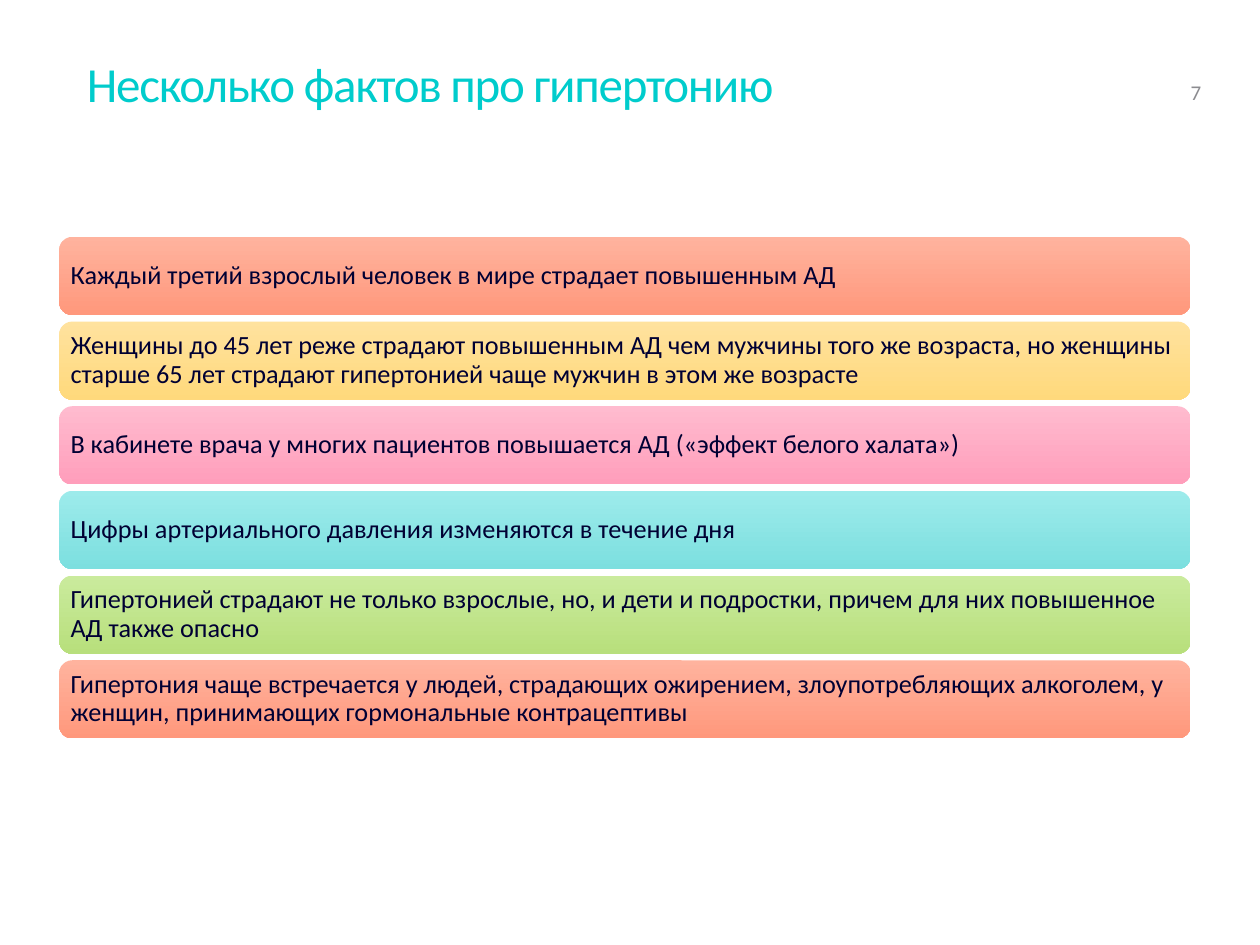
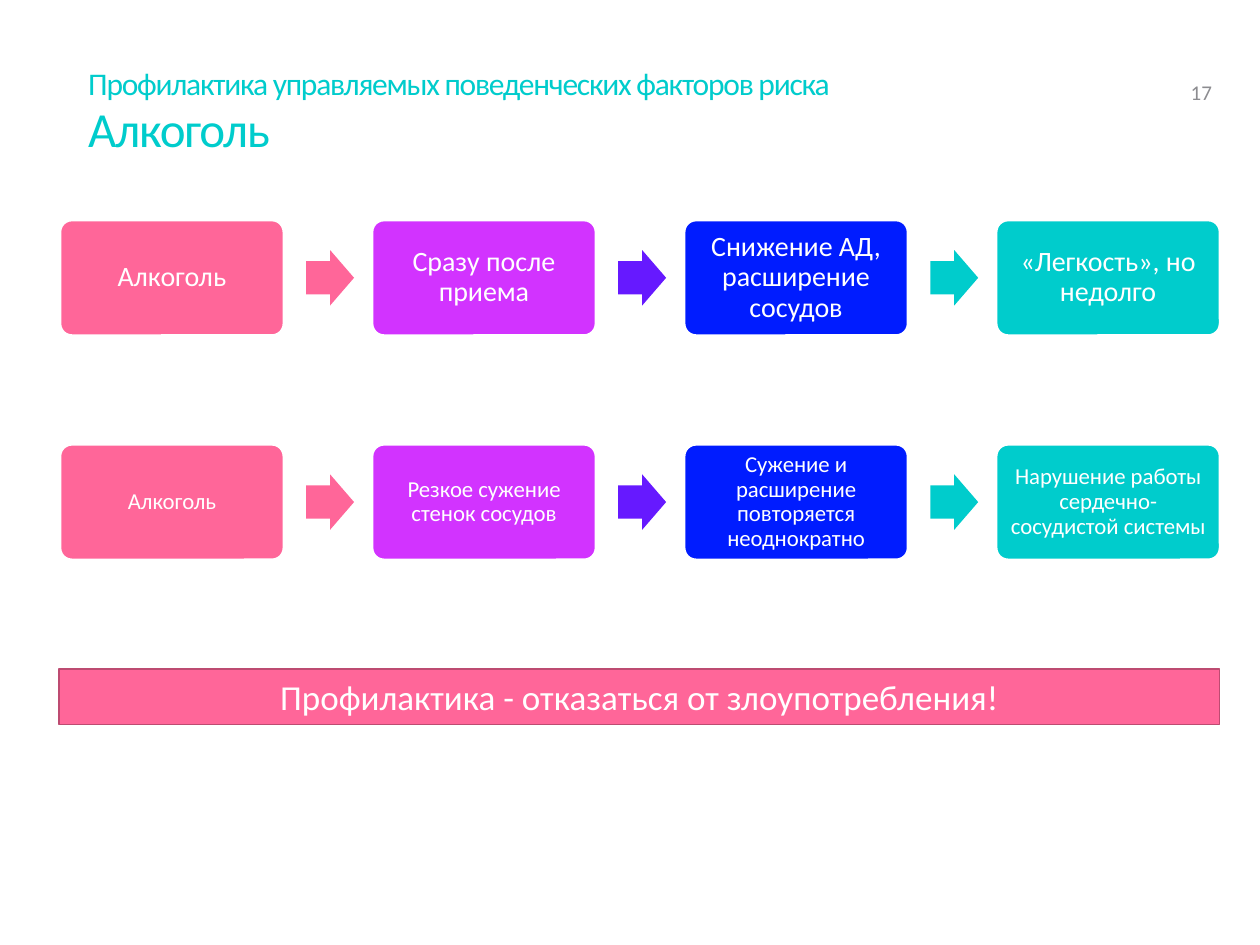
"""Build two slides on hypertension facts and alcohol as a risk factor."""
from dataclasses import dataclass
from typing import NamedTuple, Optional

from pptx import Presentation
from pptx import util as u
from pptx.dml.color import RGBColor
from pptx.enum import shapes, text


@dataclass(frozen=True)
class Theme:
    font: str = "Calibri"
    ink: str = "000033"
    white: str = "FFFFFF"
    gray: str = "8C8C90"
    teal: str = "00CCCC"
    pink: str = "FF6699"
    pink_edge: str = "BD4B71"
    purple: str = "D233FF"
    violet: str = "6619FF"
    blue: str = "001CFF"
    coral_fade: tuple = ("FFB39E", "FF987C")
    amber_fade: tuple = ("FFE29E", "FFD97C")
    rose_fade: tuple = ("FFBBCF", "FF9EBB")
    aqua_fade: tuple = ("9DEBEB", "7CDFDF")
    lime_fade: tuple = ("CAEB9D", "B8DF7C")
    title_size: int = 28
    kicker_size: int = 18
    number_size: int = 12
    fact_size: int = 15
    banner_size: int = 20
    title_leading: int = 32
    body_leading: float = 0.9


THEME = Theme()


class Box(NamedTuple):
    left: float
    top: float
    width: float
    height: float

    def lengths(self) -> list:
        return [u.Inches(side) for side in self]


class Words(NamedTuple):
    content: str
    size: int
    color: str


class Fact(NamedTuple):
    content: str
    fade: tuple


class Step(NamedTuple):
    fill: str
    arrow: Optional[str]


class Flow(NamedTuple):
    top: float
    size: int
    inset: float
    labels: tuple


FACTS = (
    Fact("Каждый третий взрослый человек в мире страдает повышенным АД", THEME.coral_fade),
    Fact("Женщины до 45 лет реже страдают повышенным АД чем мужчины того же возраста, "
         "но женщины старше 65 лет страдают гипертонией чаще мужчин в этом же возрасте",
         THEME.amber_fade),
    Fact("В кабинете врача у многих пациентов повышается АД («эффект белого халата»)",
         THEME.rose_fade),
    Fact("Цифры артериального давления изменяются в течение дня", THEME.aqua_fade),
    Fact("Гипертонией страдают не только взрослые, но, и дети и подростки, "
         "причем для них повышенное АД также опасно", THEME.lime_fade),
    Fact("Гипертония чаще встречается у людей, страдающих ожирением, злоупотребляющих "
         "алкоголем, у женщин, принимающих гормональные контрацептивы", THEME.coral_fade),
)
STEPS = (
    Step(THEME.pink, THEME.pink),
    Step(THEME.purple, THEME.violet),
    Step(THEME.blue, THEME.teal),
    Step(THEME.teal, None),
)
FLOWS = (
    Flow(1.75, 16, 0.07, ("Алкоголь", "Сразу после приема",
                          "Снижение АД, расширение сосудов", "«Легкость», но недолго")),
    Flow(3.53, 13, 0.05, ("Алкоголь", "Резкое сужение стенок сосудов",
                          "Сужение и расширение повторяется неоднократно",
                          "Нарушение работы сердечно-сосудистой системы")),
)


def rgb(color: str) -> RGBColor:
    return RGBColor.from_string(color)


def add_words(paragraph, words: Words):
    run = paragraph.add_run()
    run.text = words.content
    run.font.name = THEME.font
    run.font.size = u.Pt(words.size)
    run.font.color.rgb = rgb(words.color)
    return run


def set_frame(frame, anchor, across: float, down: float) -> None:
    frame.word_wrap = True
    frame.auto_size = text.MSO_AUTO_SIZE.NONE
    frame.vertical_anchor = anchor
    frame.margin_left = frame.margin_right = u.Inches(across)
    frame.margin_top = frame.margin_bottom = u.Inches(down)


def add_panel(parent, kind, box: Box, fill: str | tuple, edge: str | None = None):
    panel = parent.add_shape(kind, *box.lengths())
    panel.shadow.inherit = False
    if isinstance(fill, tuple):
        panel.fill.gradient()
        panel.fill.gradient_angle = 270
        for stop, color in zip(panel.fill.gradient_stops, fill):
            stop.color.rgb = rgb(color)
    else:
        panel.fill.solid()
        panel.fill.fore_color.rgb = rgb(fill)
    if edge:
        panel.line.color.rgb = rgb(edge)
        panel.line.width = u.Pt(1)
    else:
        panel.line.fill.background()
    return panel


def label_panel(panel, words: Words, align, inset: float, leading: float) -> None:
    set_frame(panel.text_frame, text.MSO_ANCHOR.MIDDLE, inset, inset)
    paragraph = panel.text_frame.paragraphs[0]
    paragraph.alignment = align
    paragraph.line_spacing = leading
    add_words(paragraph, words)


def add_titled_slide(deck, box: Box, lines: tuple, number: str):
    slide = deck.slides.add_slide(deck.slide_layouts[5])
    title = slide.shapes.title
    title.left, title.top, title.width, title.height = box.lengths()
    set_frame(title.text_frame, text.MSO_ANCHOR.TOP, 0, 0.05)
    heading = title.text_frame.paragraphs[0]
    heading.alignment = text.PP_ALIGN.LEFT
    heading.line_spacing = u.Pt(THEME.title_leading)
    for index, words in enumerate(lines):
        if index:
            heading.add_line_break()
        add_words(heading, words).font._element.set("spc", "-70")

    page = slide.shapes.add_textbox(*Box(9.45, 0.4, 0.38, 0.47).lengths())
    set_frame(page.text_frame, text.MSO_ANCHOR.BOTTOM, 0, 0.04)
    add_words(page.text_frame.paragraphs[0], Words(number, THEME.number_size, THEME.gray))
    return slide


def add_facts(slide) -> None:
    top, bottom, height = 1.88, 5.86, 0.62
    pitch = (bottom - height - top) / (len(FACTS) - 1)
    group = slide.shapes.add_group_shape().shapes
    for row, fact in enumerate(FACTS):
        bar = add_panel(group, shapes.MSO_SHAPE.ROUNDED_RECTANGLE,
                        Box(0.47, top + row * pitch, 8.98, height), fact.fade)
        label_panel(bar, Words(fact.content, THEME.fact_size, THEME.ink),
                    text.PP_ALIGN.LEFT, 0.06, THEME.body_leading)


def add_flow(slide, flow: Flow) -> None:
    left, right, width, height = 0.48, 9.68, 1.77, 0.91
    arrow_width, arrow_height = 0.38, 0.44
    pitch = (right - width - left) / (len(STEPS) - 1)
    group = slide.shapes.add_group_shape().shapes
    for column, (step, label) in enumerate(zip(STEPS, flow.labels)):
        x = left + column * pitch
        card = add_panel(group, shapes.MSO_SHAPE.ROUNDED_RECTANGLE,
                         Box(x, flow.top, width, height), step.fill, THEME.white)
        card.adjustments[0] = 0.1
        label_panel(card, Words(label, flow.size, THEME.white),
                    text.PP_ALIGN.CENTER, flow.inset, THEME.body_leading)
        if step.arrow:
            arrow = add_panel(group, shapes.MSO_SHAPE.RIGHT_ARROW,
                              Box(x + width + 0.18, flow.top + (height - arrow_height) / 2,
                                  arrow_width, arrow_height), step.arrow)
            arrow.adjustments[0] = 0.6


def main() -> None:
    deck = Presentation()
    deck.slide_width, deck.slide_height = u.Inches(10), u.Inches(7.5)

    facts = add_titled_slide(
        deck, Box(0.69, 0.4, 8.62, 1.03),
        (Words("Несколько фактов про гипертонию", THEME.title_size, THEME.teal),), "7")
    add_facts(facts)

    alcohol = add_titled_slide(
        deck, Box(0.7, 0.31, 8.62, 0.91),
        (Words("Профилактика управляемых поведенческих факторов риска",
               THEME.kicker_size, THEME.teal),
         Words("Алкоголь", THEME.title_size, THEME.teal)), "17")
    banner = add_panel(alcohol.shapes, shapes.MSO_SHAPE.RECTANGLE,
                       Box(0.47, 5.31, 9.21, 0.44), THEME.pink, THEME.pink_edge)
    label_panel(banner, Words("Профилактика - отказаться от злоупотребления!",
                              THEME.banner_size, THEME.white),
                text.PP_ALIGN.CENTER, 0.05, 1.0)
    for flow in FLOWS:
        add_flow(alcohol, flow)

    deck.save("out.pptx")


if __name__ == "__main__":
    main()
